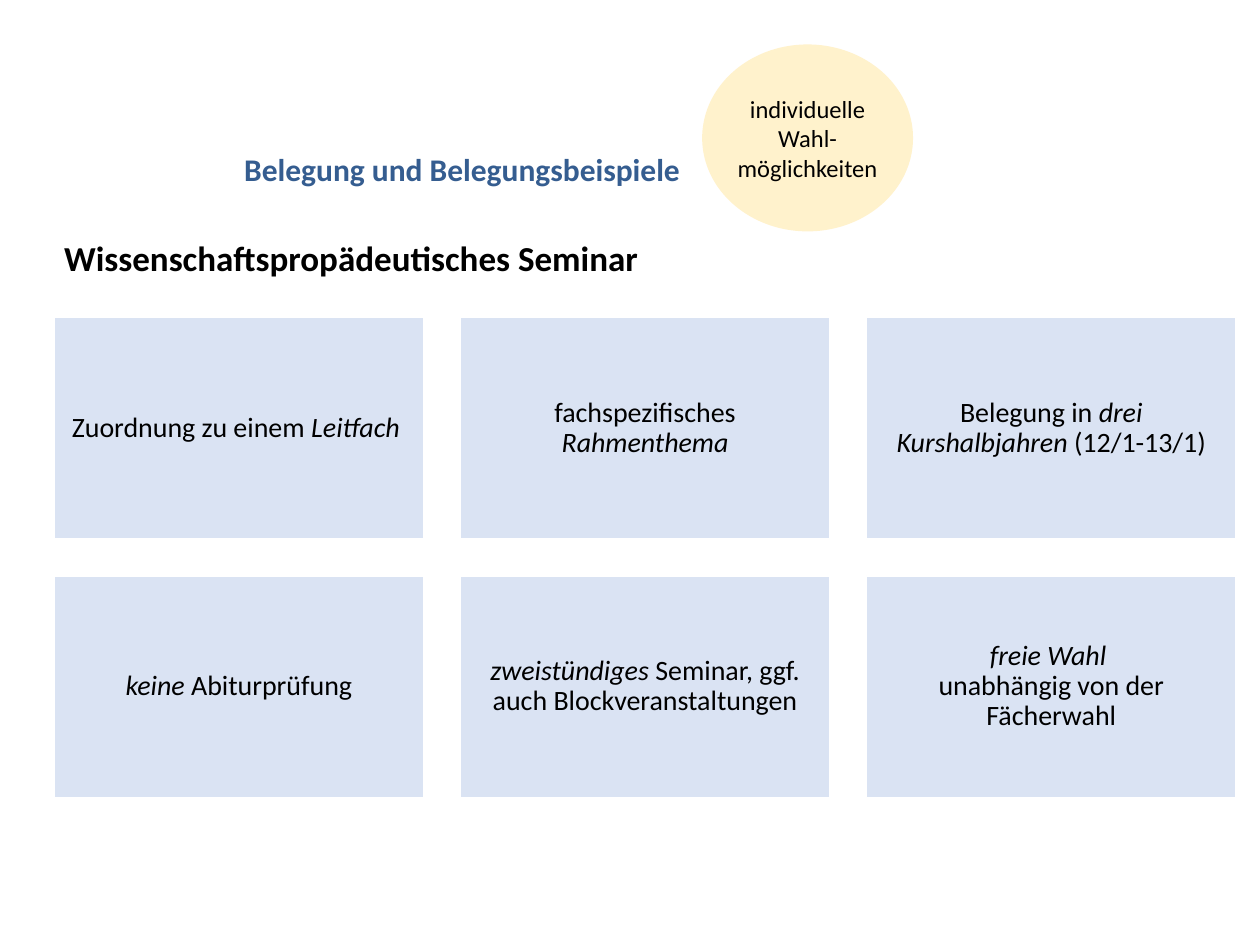
from pptx import Presentation
from pptx import util as u
from pptx.dml.color import RGBColor
from pptx.enum import shapes, text

FONT = "Calibri"
BLACK = "000000"
BLUE = "355D90"
CARD_FILL = "DAE3F3"
BADGE_FILL = "FFF2CC"
WHITE = "FFFFFF"

# Each card is a list of (wording, italic) runs; "\v" breaks the line
CARDS = [
    [("Zuordnung zu einem ", False), ("Leitfach ", True)],
    [("fachspezifisches ", False), ("Rahmenthema", True)],
    [("Belegung in ", False), ("drei Kurshalbjahren ", True), ("(12/1-13/1)", False)],
    [("keine ", True), ("Abiturprüfung", False)],
    [("zweistündiges ", True), ("Seminar, ggf. auch Blockveranstaltungen", False)],
    [("freie Wahl \v", True), ("unabhängig von der Fächerwahl", False)],
]


def color(hex_value):
    return RGBColor.from_string(hex_value)


def format_run(run, size, hex_value=BLACK, bold=False, italic=False):
    run.font.name = FONT
    run.font.size = u.Pt(size)
    run.font.color.rgb = color(hex_value)
    run.font.bold = bold
    run.font.italic = italic


def add_heading(slide, box, wording, size, hex_value):
    shape = slide.shapes.add_textbox(*map(u.Inches, box))
    frame = shape.text_frame
    frame.word_wrap = True
    frame.text = wording
    format_run(frame.paragraphs[0].runs[0], size, hex_value, bold=True)


def add_filled_shape(slide, kind, box, fill, line, inset):
    shape = slide.shapes.add_shape(kind, *map(u.Inches, box))
    shape.shadow.inherit = False
    shape.fill.solid()
    shape.fill.fore_color.rgb = color(fill)
    shape.line.color.rgb = color(line)
    shape.line.width = u.Pt(1)
    frame = shape.text_frame
    frame.word_wrap = True
    frame.vertical_anchor = text.MSO_ANCHOR.MIDDLE
    frame.margin_left = frame.margin_right = u.Inches(inset)
    frame.margin_top = frame.margin_bottom = u.Inches(inset)
    return frame


def add_card(slide, box, runs):
    frame = add_filled_shape(
        slide, shapes.MSO_SHAPE.RECTANGLE, box, CARD_FILL, WHITE, 0.07)
    paragraph = frame.paragraphs[0]
    paragraph.alignment = text.PP_ALIGN.CENTER
    paragraph.line_spacing = 0.9
    for wording, italic in runs:
        run = paragraph.add_run()
        run.text = wording.rstrip("\v")
        format_run(run, 16, italic=italic)
        if wording.endswith("\v"):
            paragraph.add_line_break()


def add_card_grid(slide, box, columns=3, rows=2, gap=0.29):
    left, top, width, height = box
    card_width = (width - gap * (columns - 1)) / columns
    card_height = (height - gap * (rows - 1)) / rows
    for index, runs in enumerate(CARDS):
        row, column = divmod(index, columns)
        add_card(slide, (left + column * (card_width + gap),
                         top + row * (card_height + gap),
                         card_width, card_height), runs)


def add_badge(slide, box, wording):
    frame = add_filled_shape(
        slide, shapes.MSO_SHAPE.OVAL, box, BADGE_FILL, BADGE_FILL, 0)
    frame.text = wording
    for paragraph in frame.paragraphs:
        paragraph.alignment = text.PP_ALIGN.CENTER
        format_run(paragraph.runs[0], 14)


def main():
    presentation = Presentation()
    presentation.slide_width = u.Inches(10)
    presentation.slide_height = u.Inches(7.5)
    slide = presentation.slides.add_slide(presentation.slide_layouts[6])

    # Headings
    add_heading(slide, (1.84, 1.14, 8.1, 0.87),
                "Belegung und Belegungsbeispiele", 18, BLUE)
    add_heading(slide, (0.41, 1.83, 9.05, 0.44),
                "Wissenschaftspropädeutisches Seminar", 20, BLACK)

    # Cards on the seminar
    add_card_grid(slide, (0.43, 2.52, 9.38, 3.81))

    # Round badge beside the title
    add_badge(slide, (5.58, 0.36, 1.66, 1.47),
              "individuelle\nWahl-\nmöglichkeiten")

    presentation.save("out.pptx")


if __name__ == "__main__":
    main()
